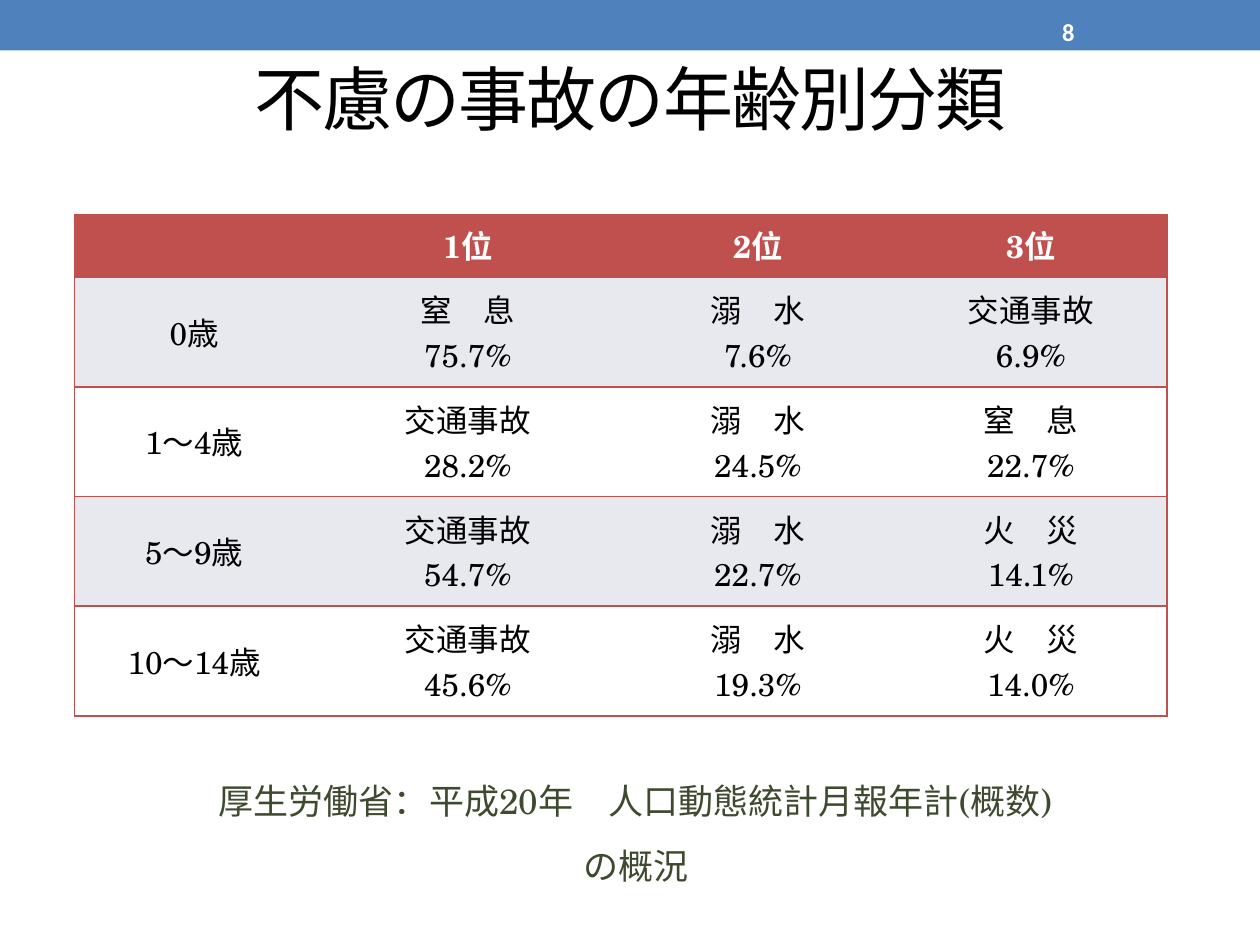
from lxml.etree import SubElement
from pptx import Presentation
from pptx.dml.color import RGBColor
from pptx.enum.shapes import MSO_SHAPE as SHAPE
from pptx.enum.text import MSO_ANCHOR as ANCHOR, PP_ALIGN as ALIGN
from pptx.oxml.ns import qn
from pptx.util import Cm, Pt

SERIF = "TeX Gyre Schola"
RED = "C0504D"
BANDS = ("FFFFFF", "E8E8EF")
COLUMN_WIDTHS = (4.83, 6.2, 5.5, 5.5)
HEADER_HEIGHT, ROW_HEIGHT = 1.27, 2.21
ROWS = (
    ("", "1位", "2位", "3位"),
    ("0歳", "窒　息\n75.7%", "溺　水\n7.6%", "交通事故\n6.9%"),
    ("1～4歳", "交通事故\n28.2%", "溺　水\n24.5%", "窒　息\n22.7%"),
    ("5～9歳", "交通事故\n54.7%", "溺　水\n22.7%", "火　災\n14.1%"),
    ("10～14歳", "交通事故\n45.6%", "溺　水\n19.3%", "火　災\n14.0%"),
)


def rgb(value):
    """Return the colour for a hex string."""
    return RGBColor.from_string(value)


def write(tf, text, size=18, color="000000", font=SERIF, bold=False,
          align=ALIGN.CENTER, line_spacing=None, tracking=None):
    """Write text into a frame, one paragraph a line."""
    for i, line in enumerate(text.split("\n")):
        p = tf.add_paragraph() if i else tf.paragraphs[0]
        p.alignment = align
        p.line_spacing = line_spacing
        r = p.add_run()
        r.text = line
        r.font.size = Pt(size)
        r.font.name = font
        r.font.bold = bold
        r.font.color.rgb = rgb(color)
        if tracking:
            r.font._element.set("spc", str(tracking * 100))


def add_text(s, box, text, anchor=ANCHOR.TOP, margins=(0.25, 0.13, 0.25, 0.13),
             **style):
    """Add a wrapping text box; margins run left, top, right, bottom."""
    tf = s.shapes.add_textbox(*map(Cm, box)).text_frame
    tf.word_wrap = True
    tf.vertical_anchor = anchor
    tf.margin_left, tf.margin_top, tf.margin_right, tf.margin_bottom = map(Cm, margins)
    write(tf, text, **style)


def add_band(s, box, color):
    """Add a plain filled rectangle."""
    sp = s.shapes.add_shape(SHAPE.RECTANGLE, *map(Cm, box))
    sp.shadow.inherit = False
    sp.fill.solid()
    sp.fill.fore_color.rgb = rgb(color)
    sp.line.fill.background()


def set_borders(cell, visible, color=RED):
    """Draw the visible sides of a cell and clear the others."""
    tc_pr = cell._tc.get_or_add_tcPr()
    for side in "LRTB":
        ln = SubElement(tc_pr, qn(f"a:ln{side}"), w=str(Pt(1)))
        if side in visible:
            fill = SubElement(ln, qn("a:solidFill"))
            SubElement(fill, qn("a:srgbClr"), val=color)
        else:
            SubElement(ln, qn("a:noFill"))


def add_ranking(s, left, top):
    """Add the table of accident causes by age."""
    last = len(COLUMN_WIDTHS) - 1
    height = HEADER_HEIGHT + ROW_HEIGHT * (len(ROWS) - 1)
    table = s.shapes.add_table(len(ROWS), last + 1, Cm(left), Cm(top),
                               Cm(sum(COLUMN_WIDTHS)), Cm(height)).table
    for column, width in zip(table.columns, COLUMN_WIDTHS):
        column.width = Cm(width)
    for i, row in enumerate(ROWS):
        header = i == 0
        table.rows[i].height = Cm(HEADER_HEIGHT if header else ROW_HEIGHT)
        for j, text in enumerate(row):
            cell = table.cell(i, j)
            cell.vertical_anchor = ANCHOR.MIDDLE
            set_borders(cell, "TB" + {0: "L", last: "R"}.get(j, ""))
            cell.fill.solid()
            cell.fill.fore_color.rgb = rgb(RED if header else BANDS[i % 2])
            if text:
                write(cell.text_frame, text, bold=header,
                      color="FFFFFF" if header else "000000")


def main():
    """Build and save the slide."""
    prs = Presentation()
    prs.slide_width, prs.slide_height = Cm(25.4), Cm(19.05)
    s = prs.slides.add_slide(prs.slide_layouts[6])
    add_band(s, (0, 0, 25.4, 1.02), "4F81BD")
    add_text(s, (2.54, 0.76, 20.32, 2.41), "不慮の事故の年齢別分類",
             anchor=ANCHOR.MIDDLE, size=40, tracking=-1)
    add_ranking(s, 1.5, 4.32)
    add_text(s, (4.29, 15.11, 17.58, 1.02),
             "厚生労働省：平成20年　人口動態統計月報年計(概数)の概況",
             margins=(0, 0.13, 0.53, 0.13), size=20, color="3D4A2F",
             line_spacing=1.55)
    add_text(s, (21.16, 0.05, 2.97, 0.91), "8", anchor=ANCHOR.MIDDLE,
             margins=(0.25, 0.3, 0.25, 0.05), size=14, color="FFFFFF",
             font="Calibri", bold=True, align=ALIGN.LEFT)
    prs.save("out.pptx")


if __name__ == "__main__":
    main()
